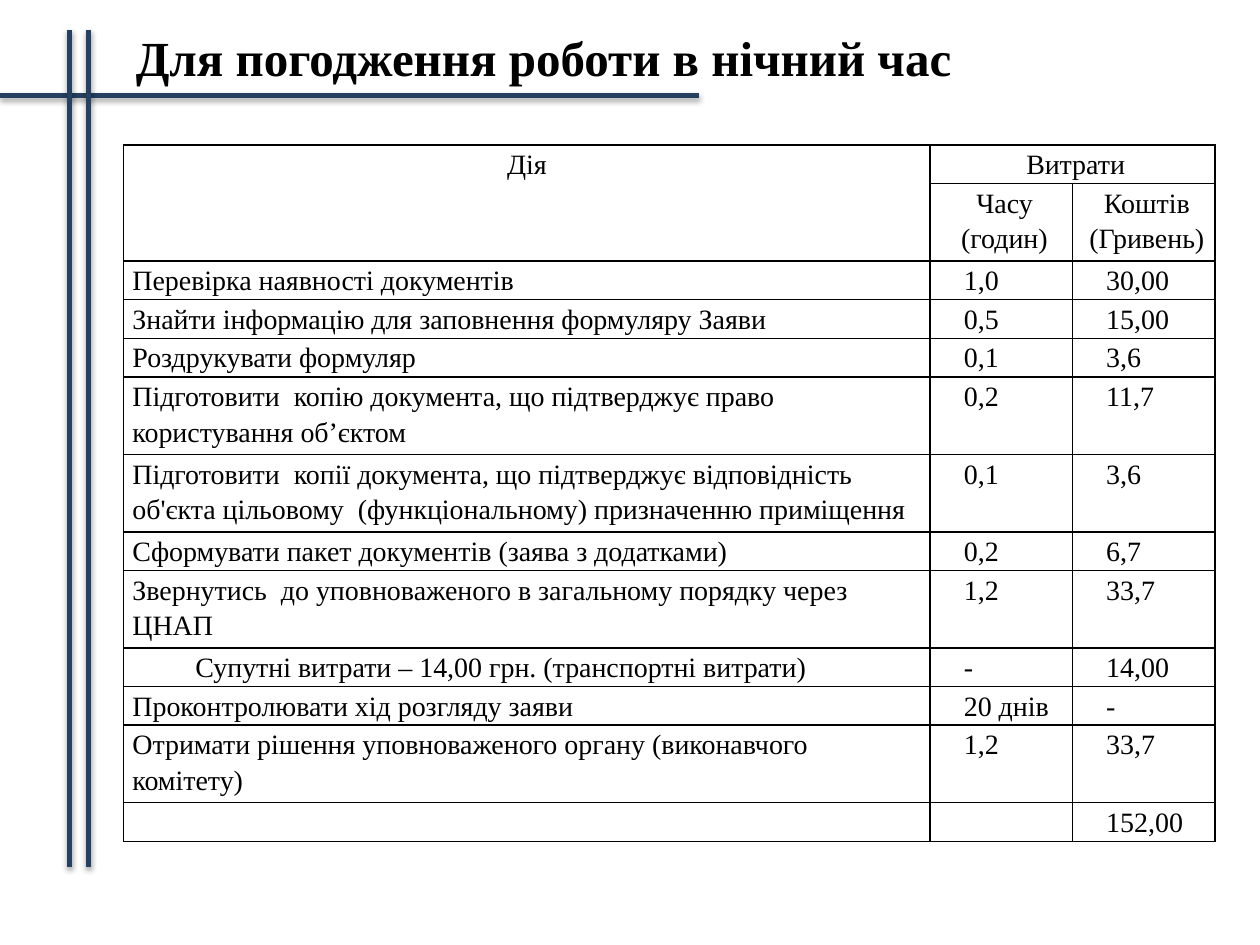
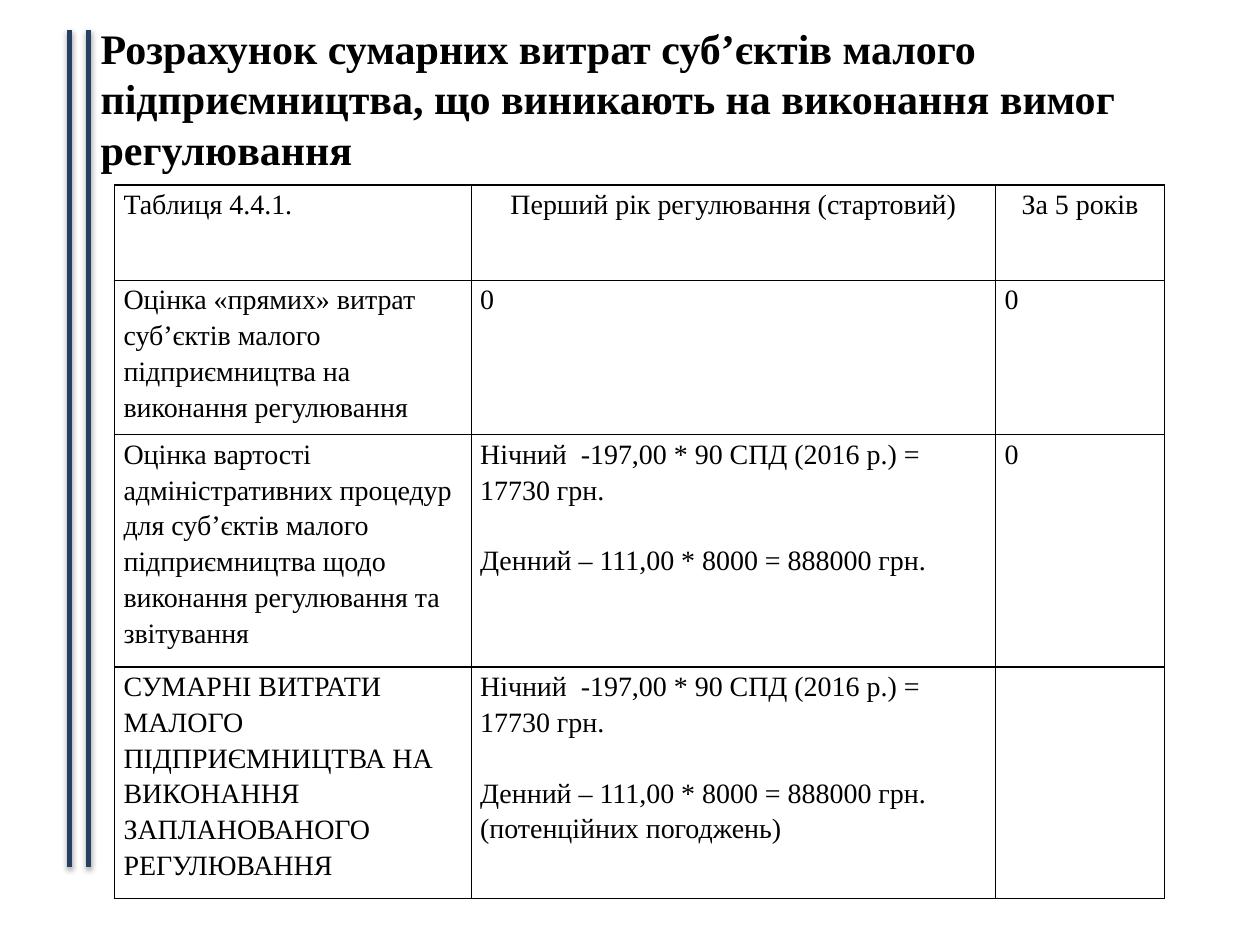
"""Builds two slides on the costs of regulation: a table of steps and a table of totals."""
from lxml import etree
from pptx import Presentation
from pptx import util as u
from pptx.dml.color import RGBColor
from pptx.enum import shapes, text
from pptx.oxml import ns

COLOURS = {"rule": "254061", "ink": "000000"}
FONT = "Times New Roman"
LEFT, CENTRE, JUSTIFY = text.PP_ALIGN.LEFT, text.PP_ALIGN.CENTER, text.PP_ALIGN.JUSTIFY
BODY_SIZE = 16
LINE_GAP = 20

SIDE_RULES = [(1.4, 0.6, 1.4, 17.47), (1.78, 0.6, 1.78, 17.47)]
TITLE_RULE = (0, 1.93, 14.1, 1.93)

NIGHT_TITLE = "Для погодження роботи в нічний час"
NIGHT_HEAD = [("Дія", "Витрати", ""), ("", "Часу (годин)", "Коштів\n(Гривень)")]
NIGHT_STEPS = [
    ("Перевірка наявності документів", "1,0", "30,00"),
    ("Знайти інформацію для заповнення формуляру Заяви", "0,5", "15,00"),
    ("Роздрукувати формуляр", "0,1", "3,6"),
    ("Підготовити  копію документа, що підтверджує право користування об’єктом", "0,2", "11,7"),
    ("Підготовити  копії документа, що підтверджує відповідність об'єкта цільовому  "
     "(функціональному) призначенню приміщення", "0,1", "3,6"),
    ("Сформувати пакет документів (заява з додатками)", "0,2", "6,7"),
    ("Звернутись  до уповноваженого в загальному порядку через ЦНАП", "1,2", "33,7"),
    ("Супутні витрати – 14,00 грн. (транспортні витрати)", "-", "14,00"),
    ("Проконтролювати хід розгляду заяви", "20 днів", "-"),
    ("Отримати рішення уповноваженого органу (виконавчого комітету)", "1,2", "33,7"),
    ("", "", "152,00"),
]
NIGHT_COLUMNS = [16.26, 2.87, 2.87]
NIGHT_LINES = [1, 2, 1, 1, 1, 2, 2, 1, 2, 1, 1, 2, 1]
LINE_HEIGHT = 0.78

TOTAL_TITLE = ("Розрахунок сумарних витрат суб’єктів малого підприємництва, "
               "що виникають на виконання вимог регулювання")
NIGHT_SUM = "Нічний  -197,00 * 90 СПД (2016 р.) = 17730 грн."
DAY_SUM = "Денний – 111,00 * 8000 = 888000 грн."
TOTAL_ROWS = [
    ("Таблиця 4.4.1.", "Перший рік регулювання (стартовий)", "За 5 років"),
    ("Оцінка «прямих» витрат суб’єктів малого підприємництва на виконання регулювання", "0", "0"),
    ("Оцінка вартості адміністративних процедур для суб’єктів малого підприємництва "
     "щодо виконання регулювання та звітування", f"{NIGHT_SUM}\n{DAY_SUM}", "0"),
    ("СУМАРНІ ВИТРАТИ МАЛОГО ПІДПРИЄМНИЦТВА НА ВИКОНАННЯ ЗАПЛАНОВАНОГО  РЕГУЛЮВАННЯ",
     f"{NIGHT_SUM}\n{DAY_SUM} (потенційних погоджень)", ""),
]
TOTAL_COLUMNS = [7.19, 10.57, 3.4]
TOTAL_HEIGHTS = [1.92, 3.1, 4.68, 4.66]


def style_runs(para, size, bold=False):
    for span in para.runs:
        span.font.name = FONT
        span.font.size = u.Pt(size)
        span.font.bold = bold
        span.font.color.rgb = RGBColor.from_string(COLOURS["ink"])


def add_rule(slide, ends):
    rule = slide.shapes.add_connector(shapes.MSO_CONNECTOR.STRAIGHT, *map(u.Cm, ends))
    rule.line.color.rgb = RGBColor.from_string(COLOURS["rule"])
    rule.line.width = u.Pt(3)
    effects = etree.SubElement(rule._element.spPr, ns.qn("a:effectLst"))
    shadow = etree.SubElement(effects, ns.qn("a:outerShdw"), blurRad=str(u.Pt(3.1)),
                              dist=str(u.Pt(1.8)), dir="5400000", rotWithShape="0")
    colour = etree.SubElement(shadow, ns.qn("a:srgbClr"), val=COLOURS["ink"])
    etree.SubElement(colour, ns.qn("a:alpha"), val="35000")


def add_title(slide, wording, place, size, wrap):
    box = slide.shapes.add_textbox(*map(u.Cm, place))
    box.text_frame.text = wording
    box.text_frame.word_wrap = wrap
    style_runs(box.text_frame.paragraphs[0], size, bold=True)


def add_borders(cell):
    properties = cell._tc.get_or_add_tcPr()
    for index, side in enumerate(("lnL", "lnR", "lnT", "lnB")):
        border = etree.Element(ns.qn(f"a:{side}"), w=str(u.Pt(1)))
        fill = etree.SubElement(border, ns.qn("a:solidFill"))
        etree.SubElement(fill, ns.qn("a:srgbClr"), val=COLOURS["ink"])
        properties.insert(index, border)


def add_grid(slide, rows, left, top, widths, heights, layout):
    """Adds a table; layout(row, column) gives the alignment and left indent in cm."""
    frame = slide.shapes.add_table(len(rows), len(widths), u.Cm(left), u.Cm(top),
                                   u.Cm(sum(widths)), u.Cm(sum(heights)))
    table = frame.table
    table.first_row = table.horz_banding = False
    for column, width in zip(table.columns, widths):
        column.width = u.Cm(width)
    for row_index, (row, height) in enumerate(zip(rows, heights)):
        table.rows[row_index].height = u.Cm(height)
        for column_index, wording in enumerate(row):
            cell = table.cell(row_index, column_index)
            cell.fill.background()
            add_borders(cell)
            cell.margin_left = cell.margin_right = u.Cm(0.18)
            cell.margin_top = cell.margin_bottom = 0
            cell.text_frame.text = wording
            align, indent = layout(row_index, column_index)
            for para in cell.text_frame.paragraphs:
                para.alignment = align
                para.line_spacing = 1.15
                para._p.get_or_add_pPr().set("marL", str(u.Cm(indent)))
                style_runs(para, BODY_SIZE)
    return table


def night_layout(row, column):
    if row < len(NIGHT_HEAD):
        return CENTRE, 0.13 if column else 0
    if column:
        return LEFT, 0.5
    is_extra = NIGHT_STEPS[row - len(NIGHT_HEAD)][0].startswith("Супутні")
    return (JUSTIFY, 1.27) if is_extra else (LEFT, 0)


def total_layout(row, column):
    return (CENTRE if row == 0 and column else LEFT), 0


def build_night_slide(slide):
    add_title(slide, NIGHT_TITLE, (2.49, 0.43, 17.37, 1.45), 28, wrap=False)
    table = add_grid(slide, NIGHT_HEAD + NIGHT_STEPS, 2.49, 2.92, NIGHT_COLUMNS,
                     [lines * LINE_HEIGHT for lines in NIGHT_LINES], night_layout)
    table.cell(0, 0).merge(table.cell(1, 0))
    table.cell(0, 1).merge(table.cell(0, 2))


def build_total_slide(slide):
    add_title(slide, TOTAL_TITLE, (1.78, 0.33, 22.28, 3.33), 24, wrap=True)
    table = add_grid(slide, TOTAL_ROWS, 2.31, 3.73, TOTAL_COLUMNS, TOTAL_HEIGHTS, total_layout)
    for row in (2, 3):
        table.cell(row, 1).text_frame.paragraphs[1].space_before = u.Pt(LINE_GAP)


def main():
    deck = Presentation()
    deck.slide_width, deck.slide_height = u.Cm(25.4), u.Cm(19.05)
    for build, rules in ((build_night_slide, [TITLE_RULE] + SIDE_RULES),
                         (build_total_slide, SIDE_RULES)):
        slide = deck.slides.add_slide(deck.slide_layouts[6])
        for ends in rules:
            add_rule(slide, ends)
        build(slide)
    deck.save("out.pptx")


if __name__ == "__main__":
    main()
